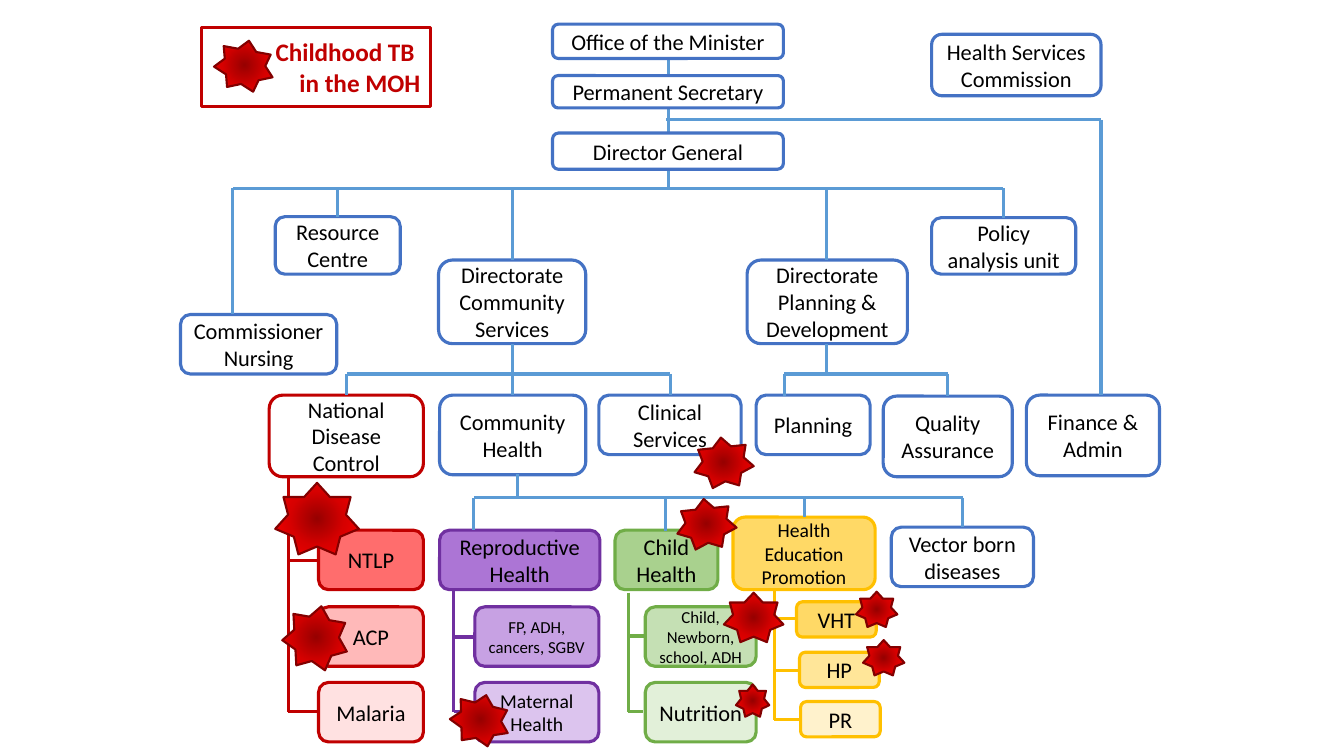
from lxml import etree
from pptx import Presentation
from pptx.dml.color import RGBColor
from pptx.enum.shapes import MSO_CONNECTOR as Connector, MSO_SHAPE as Shape
from pptx.enum.text import MSO_ANCHOR as Anchor, MSO_AUTO_SIZE as AutoSize, PP_ALIGN as Align
from pptx.oxml import parse_xml
from pptx.oxml.ns import nsdecls, qn
from pptx.util import Inches, Pt

FONT = "Calibri"
WHITE, BLACK = "FFFFFF", "000000"
BLUE, LINK = "4472C4", "5B9BD5"
RED, PURPLE, GREEN, GOLD = "C00000", "7030A0", "70AD47", "FFC000"
STAR_LINE = "820000"
STAR_STOPS = [(0, "970000"), (50, "D70000"), (100, "FF0000")]

# Offices: text, left, top, width, height
OFFICES = [
    ("Office of the Minister", 5.48, 0.24, 2.29, 0.34),
    ("Permanent Secretary", 5.48, 0.75, 2.29, 0.32),
    ("Health Services Commission", 9.24, 0.34, 1.68, 0.61),
    ("Director General", 5.48, 1.32, 2.29, 0.36),
    ("Policy analysis unit", 9.24, 2.16, 1.43, 0.56),
    ("Directorate Community Services", 4.35, 2.58, 1.46, 0.83),
    ("Resource Centre", 2.73, 2.15, 1.24, 0.57),
    ("Commissioner Nursing", 1.79, 3.12, 1.55, 0.59),
    ("Directorate Planning & Development", 7.41, 2.58, 1.59, 0.83),
    ("Community Health", 4.36, 3.92, 1.45, 0.79),
    ("Clinical Services", 5.94, 3.92, 1.41, 0.59),
    ("Planning", 7.5, 3.92, 1.13, 0.59),
    ("Quality Assurance", 8.76, 3.93, 1.28, 0.8),
    ("Finance & Admin", 10.18, 3.92, 1.32, 0.8),
    ("Vector born diseases", 8.84, 5.23, 1.41, 0.59),
]

# Programmes: the same, then line, fill, text size
PROGRAMMES = [
    ("National Disease Control", 2.67, 3.92, 1.53, 0.81, RED, WHITE, 16),
    ("NTLP", 3.16, 5.26, 1.04, 0.59, RED, "FF6D6D", 16),
    ("ACP", 3.16, 6.02, 1.04, 0.59, RED, "FFB9B9", 16),
    ("Malaria", 3.16, 6.77, 1.04, 0.59, RED, "FFE1E1", 16),
    ("Reproductive Health", 4.36, 5.26, 1.59, 0.59, PURPLE, "AC75D5", 16),
    ("FP, ADH, cancers, SGBV", 4.71, 6.02, 1.23, 0.59, PURPLE, "C7A1E3", 12),
    ("Maternal Health", 4.71, 6.77, 1.23, 0.59, PURPLE, "DCC4EE", 14),
    ("Child Health", 6.1, 5.26, 1.02, 0.59, GREEN, "A9D18E", 16),
    ("Child, Newborn, school, ADH", 6.4, 6.02, 1.1, 0.59, GREEN, "C5E0B4", 12),
    ("Nutrition", 6.4, 6.77, 1.1, 0.59, GREEN, "E2F0D9", 16),
    ("Health Education Promotion", 7.27, 5.13, 1.41, 0.72, GOLD, "FFD966", 14),
    ("VHT", 7.9, 5.97, 0.79, 0.35, GOLD, "FFD966", 16),
    ("HP", 7.93, 6.47, 0.79, 0.35, GOLD, "FFE699", 16),
    ("PR", 7.94, 6.96, 0.79, 0.35, GOLD, "FFF2CC", 16),
]

# Horizontal links: y, left, right, then the (x, y) ends of the branches
BUSES = [
    (1.87, 2.31, 9.95, [(2.31, 3.12), (3.35, 2.15), (5.08, 2.58), (8.2, 2.58), (9.95, 2.16)]),
    (1.19, 6.61, 10.92, [(10.92, 3.92)]),
    (3.71, 3.44, 6.65, [(3.44, 3.92), (5.08, 3.41), (5.08, 3.92), (6.65, 3.92)]),
    (3.71, 7.78, 9.4, [(7.78, 3.93), (8.2, 3.41), (9.4, 3.93)]),
    (4.94, 4.7, 9.55, [(4.7, 5.26), (5.13, 4.7), (6.6, 5.27), (7.98, 5.13), (9.55, 5.23)]),
]

# Side trees: colour, trunk x, top, then the (x, y) ends of the branches
SIDE_TREES = [
    (RED, 2.86, 4.72, [(3.16, 5.56), (3.16, 6.31), (3.16, 7.06)]),
    (PURPLE, 4.5, 5.85, [(4.71, 6.32), (4.71, 7.06)]),
    (GREEN, 6.23, 5.88, [(6.4, 6.31), (6.38, 7.06)]),
    (GOLD, 7.68, 5.85, [(7.9, 6.14), (7.93, 6.65), (7.94, 7.14)]),
]

# Stars: left, top, width, height, rotation
STARS = [
    (2.73, 4.79, 0.83, 0.71, 0),
    (2.13, 0.4, 0.59, 0.49, 10.3),
    (4.47, 6.89, 0.59, 0.49, 13.5),
    (2.81, 6.01, 0.65, 0.62, 9.9),
    (6.71, 4.95, 0.59, 0.49, 354.1),
    (7.3, 6.79, 0.33, 0.32, 0),
    (7.18, 5.88, 0.59, 0.49, 0),
    (8.56, 6.35, 0.41, 0.35, 0),
    (6.88, 4.34, 0.59, 0.49, 354.1),
    (8.49, 5.87, 0.41, 0.35, 0),
]


def colour(value):
    return RGBColor.from_string(value)


def set_line(line, value, width=2.25):
    line.color.rgb = colour(value)
    line.width = Pt(width)


def add_run(paragraph, text, size, value=BLACK, bold=False):
    run = paragraph.add_run()
    run.text = text
    run.font.name = FONT
    run.font.size = Pt(size)
    run.font.bold = bold
    run.font.color.rgb = colour(value)


def add_preset(slide, kind, left, top, width, height):
    shape = slide.shapes.add_shape(kind, *map(Inches, (left, top, width, height)))
    shape.shadow.inherit = False
    return shape


def add_box(slide, text, left, top, width, height, line=BLUE, fill=WHITE, size=16):
    shape = add_preset(slide, Shape.ROUNDED_RECTANGLE, left, top, width, height)
    shape.fill.solid()
    shape.fill.fore_color.rgb = colour(fill)
    set_line(shape.line, line)
    frame = shape.text_frame
    frame.word_wrap = True
    frame.vertical_anchor = Anchor.MIDDLE
    paragraph = frame.paragraphs[0]
    paragraph.alignment = Align.CENTER
    add_run(paragraph, text, size)


def add_link(slide, x1, y1, x2, y2, value=LINK):
    link = slide.shapes.add_connector(Connector.STRAIGHT, *map(Inches, (x1, y1, x2, y2)))
    set_line(link.line, value)
    etree.SubElement(link._element.spPr, qn("a:effectLst"))


def add_bus(slide, y, left, right, ends):
    add_link(slide, left, y, right, y)
    for x, end in ends:
        add_link(slide, x, y, x, end)


def add_side_tree(slide, value, x, top, ends):
    add_link(slide, x, top, x, ends[-1][1], value)
    for end, y in ends:
        add_link(slide, x, y, end, y, value)


def add_star(slide, left, top, width, height, rotation):
    star = add_preset(slide, Shape.STAR_7_POINT, left, top, width, height)
    star.rotation = rotation
    set_line(star.line, STAR_LINE, 1.5)
    stops = "".join(f'<a:gs pos="{position * 1000}"><a:srgbClr val="{value}"/></a:gs>'
                    for position, value in STAR_STOPS)
    gradient = parse_xml(
        f'<a:gradFill {nsdecls("a")} rotWithShape="1"><a:gsLst>{stops}</a:gsLst><a:path path="circle">'
        '<a:fillToRect l="50000" t="50000" r="50000" b="50000"/></a:path></a:gradFill>')
    star._element.spPr.find(qn("a:prstGeom")).addnext(gradient)


def format_title(title):
    title.left, title.top, title.width, title.height = map(Inches, (2, 0.27, 2.27, 0.79))
    outline = parse_xml(f'<a:prstGeom {nsdecls("a")} prst="roundRect"><a:avLst/></a:prstGeom>')
    title._element.spPr.find(qn("a:xfrm")).addnext(outline)
    set_line(title.line, RED)
    frame = title.text_frame
    frame.word_wrap = True
    frame.auto_size = AutoSize.NONE
    frame.vertical_anchor = Anchor.MIDDLE
    for paragraph, text in ((frame.paragraphs[0], "Childhood TB "),
                            (frame.add_paragraph(), "in the MOH")):
        paragraph.alignment = Align.RIGHT
        paragraph.space_before = Pt(0)
        add_run(paragraph, text, 18, RED, bold=True)


def main():
    presentation = Presentation()
    presentation.slide_width = Inches(13.33)
    presentation.slide_height = Inches(7.5)
    slide = presentation.slides.add_slide(presentation.slide_layouts[5])
    format_title(slide.shapes.title)

    # Line of command, behind the boxes
    add_link(slide, 6.63, 0.59, 6.63, 1.89)

    # Boxes
    for box in OFFICES + PROGRAMMES:
        add_box(slide, *box)

    # Links
    for bus in BUSES:
        add_bus(slide, *bus)
    for tree in SIDE_TREES:
        add_side_tree(slide, *tree)

    # Places where childhood TB is handled
    for star in STARS:
        add_star(slide, *star)

    presentation.save("out.pptx")


if __name__ == "__main__":
    main()
